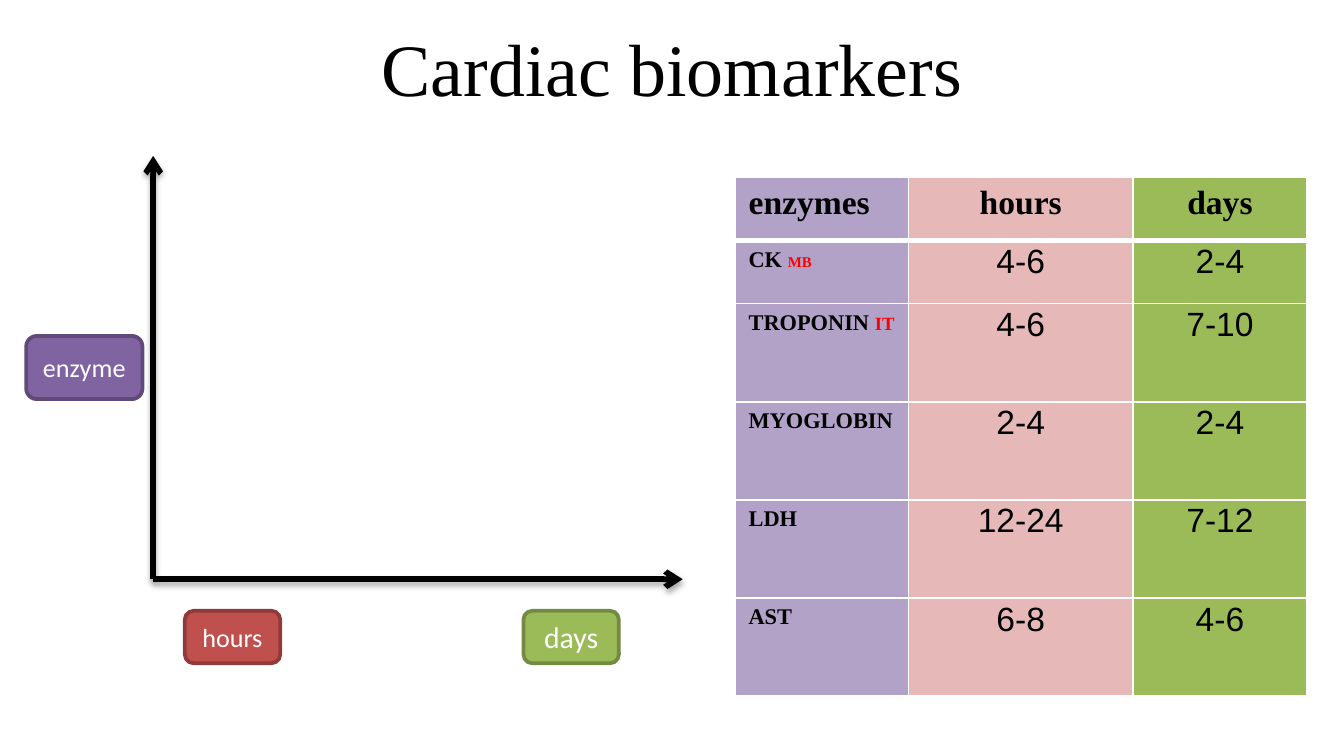
import pptx
import pptx.util
import pptx.dml.color
import pptx.enum.shapes
import pptx.enum.text
import pptx.oxml
from dataclasses import dataclass

PX = 4572
NS = 'xmlns:a="http://schemas.openxmlformats.org/drawingml/2006/main"'
ALIGN = pptx.enum.text.PP_ALIGN
MIDDLE = pptx.enum.text.MSO_ANCHOR.MIDDLE


@dataclass(frozen=True)
class Theme:
    serif: str = "Times New Roman"
    sans: str = "Calibri"
    digits: str = "Arial"
    black: str = "000000"
    white: str = "FFFFFF"
    red: str = "FF0000"
    purple: str = "8064A2"
    purple_edge: str = "5F4A78"
    brick: str = "C0504D"
    brick_edge: str = "8E3B39"
    green: str = "9BBB59"
    green_edge: str = "738A42"
    lilac: str = "B3A2C7"
    pink: str = "E6B9B8"
    title: float = 39.6
    large: float = 18
    label: float = 14
    days_label: float = 16
    marker: float = 12


T = Theme()
COLUMNS = [("enzymes", 258, T.lilac), ("hours", 334, T.pink), ("days", 259, T.green)]
MARKERS = [
    ("CK ", "MB", 8, "4-6", "2-4"),
    ("TROPONIN ", "IT", 10, "4-6", "7-10"),
    ("MYOGLOBIN", "", 0, "2-4", "2-4"),
    ("LDH", "", 0, "12-24", "7-12"),
    ("AST", "", 0, "6-8", "4-6"),
]
ROW_HEIGHTS = [94, 94, 146, 146, 146, 146]


def px(*lengths):
    return [pptx.util.Emu(n * PX) for n in lengths]


def rgb(color):
    return pptx.dml.color.RGBColor.from_string(color)


def add_run(p, text, size, color, name, bold=False):
    r = p.add_run()
    r.text = text
    values = {"size": pptx.util.Pt(size), "name": name, "bold": bold}
    for key, value in values.items():
        setattr(r.font, key, value)
    r.font.color.rgb = rgb(color)
    return r


def add_title(s, x, y, w, h):
    sp = s.shapes.title
    sp.left, sp.top, sp.width, sp.height = px(x, y, w, h)
    tf = sp.text_frame
    tf.auto_size = pptx.enum.text.MSO_AUTO_SIZE.NONE
    tf.vertical_anchor = MIDDLE
    p = tf.paragraphs[0]
    p.alignment = ALIGN.CENTER
    add_run(p, "Cardiac biomarkers", T.title, T.black, T.serif)


def add_axis(s, x1, y1, x2, y2):
    axis = s.shapes.add_connector(pptx.enum.shapes.MSO_CONNECTOR.STRAIGHT, *px(x1, y1, x2, y2))
    axis.line.width = pptx.util.Pt(3)
    axis.line.color.rgb = rgb(T.black)
    axis.line._get_or_add_ln().append(pptx.oxml.parse_xml(f'<a:tailEnd {NS} type="arrow"/>'))
    axis._element.spPr.append(pptx.oxml.parse_xml(
        f'<a:effectLst {NS}><a:outerShdw blurRad="40000" dist="23000" dir="5400000" rotWithShape="0">'
        f'<a:srgbClr val="{T.black}"><a:alpha val="35000"/></a:srgbClr></a:outerShdw></a:effectLst>'))


def add_label(s, box, text, fill, edge, size):
    kind = pptx.enum.shapes.MSO_SHAPE.FLOWCHART_ALTERNATE_PROCESS
    sp = s.shapes.add_shape(kind, *px(*box))
    sp.shadow.inherit = False
    sp.fill.solid()
    sp.fill.fore_color.rgb = rgb(fill)
    sp.line.color.rgb = rgb(edge)
    sp.line.width = pptx.util.Pt(2)
    tf = sp.text_frame
    tf.word_wrap = True
    tf.vertical_anchor = MIDDLE
    p = tf.paragraphs[0]
    p.alignment = ALIGN.CENTER
    add_run(p, text, size, T.white, T.sans)


def add_axes(s, x, y, w, h):
    origin_x, origin_y = x + 189, y + 630
    add_axis(s, origin_x, origin_y, x + w, origin_y)
    add_axis(s, origin_x, origin_y, origin_x, y)
    labels = [
        ((x, y + 268, 173, 94), "enzyme", T.purple, T.purple_edge, T.label),
        ((x + 236, y + h - 78, 142, 78), "hours", T.brick, T.brick_edge, T.label),
        ((x + 740, y + h - 78, 142, 78), "days", T.green, T.green_edge, T.days_label),
    ]
    for label in labels:
        add_label(s, *label)


def style_cell(cell, fill, bottom):
    tcPr = cell._tc.get_or_add_tcPr()
    for side, width in {"L": 1, "R": 1, "T": 1, "B": bottom}.items():
        tcPr.append(pptx.oxml.parse_xml(
            f'<a:ln{side} {NS} w="{width * 12700}"><a:solidFill>'
            f'<a:srgbClr val="{T.white}"/></a:solidFill></a:ln{side}>'))
    cell.fill.solid()
    cell.fill.fore_color.rgb = rgb(fill)


def add_number(cell, p, text):
    cell.margin_top = px(4)[0]
    p._p.get_or_add_pPr().set("rtl", "1")
    r = add_run(p, text, T.large, T.black, T.serif)
    r.font._element.append(pptx.oxml.parse_xml(f'<a:cs {NS} typeface="{T.digits}"/>'))


def add_marker_table(s, x, y, w, h):
    table = s.shapes.add_table(len(ROW_HEIGHTS), len(COLUMNS), *px(x, y, w, h)).table
    for row, height in zip(table.rows, ROW_HEIGHTS):
        row.height = px(height)[0]
    for c, (heading, width, fill) in enumerate(COLUMNS):
        table.columns[c].width = px(width)[0]
        for i in range(len(ROW_HEIGHTS)):
            cell = table.cell(i, c)
            style_cell(cell, fill, 1 if i else 3)
            p = cell.text_frame.paragraphs[0]
            p.alignment = ALIGN.CENTER if c else ALIGN.LEFT
            if i == 0:
                add_run(p, heading, T.large, T.black, T.serif, True)
                continue
            name, suffix, suffix_size, *numbers = MARKERS[i - 1]
            if c:
                add_number(cell, p, numbers[c - 1])
                continue
            add_run(p, name, T.marker, T.black, T.serif, True)
            if suffix:
                add_run(p, suffix, suffix_size, T.red, T.serif, True)


def main():
    prs = pptx.Presentation()
    prs.slide_width, prs.slide_height = px(2000, 1125)
    s = prs.slides.add_slide(prs.slide_layouts[5])
    add_title(s, 100, 45, 1800, 108)
    add_marker_table(s, 1094, 264, 851, 772)
    add_axes(s, 39, 232, 977, 755)
    prs.save("out.pptx")


if __name__ == "__main__":
    main()
